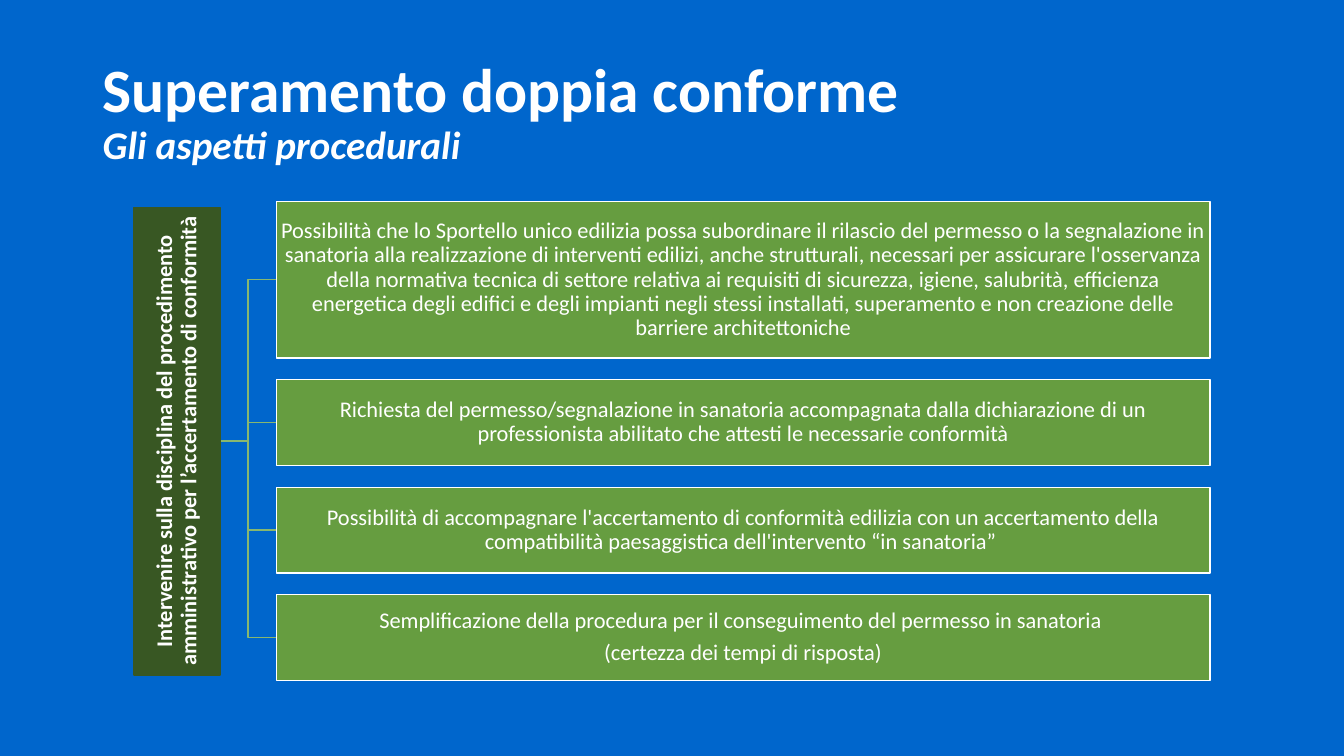
"""Build the slide on the procedural side of the double conformity reform."""
from dataclasses import dataclass

from pptx import Presentation
from pptx.dml.color import RGBColor
from pptx.enum.shapes import MSO_SHAPE as Shape
from pptx.enum.text import MSO_ANCHOR as Anchor, PP_ALIGN as Align
from pptx.util import Emu, Inches, Pt

BLUE = RGBColor(0x00, 0x66, 0xCC)
WHITE = RGBColor(0xFF, 0xFF, 0xFF)
GREEN = RGBColor(0x66, 0x9D, 0x40)
DARK = RGBColor(0x38, 0x57, 0x23)
PALE = RGBColor(0x88, 0xB7, 0x6F)

WIDE, HIGH = Inches(13.33), Inches(7.5)
LEFT, SPAN = 20.56, 69.47
TOP, GAP = 26.67, 2.88
ROOT_X, ROOT_Y = 13.17, 58.35
ROOT_LONG, ROOT_THICK = 61.87, 6.4
EDGE = ROOT_X + ROOT_THICK / 2
SPINE = (EDGE + LEFT) / 2


@dataclass
class Step:
    lines: list[str]
    tall: float = 11.35


ROOT = ["Intervenire sulla disciplina del procedimento amministrativo per l’accertamento di conformità"]
STEPS = [
    Step(["Possibilità che lo Sportello unico edilizia possa subordinare il rilascio del permesso "
          "o la segnalazione in sanatoria alla realizzazione di interventi edilizi, anche "
          "strutturali, necessari per assicurare l'osservanza della normativa tecnica di settore "
          "relativa ai requisiti di sicurezza, igiene, salubrità, efficienza energetica degli "
          "edifici e degli impianti negli stessi installati, superamento e non creazione delle "
          "barriere architettoniche"], 20.67),
    Step(["Richiesta del permesso/segnalazione in sanatoria accompagnata dalla dichiarazione di un "
          "professionista abilitato che attesti le necessarie conformità"]),
    Step(["Possibilità di accompagnare l'accertamento di conformità edilizia con un accertamento "
          "della compatibilità paesaggistica dell'intervento “in sanatoria” "]),
    Step(["Semplificazione della procedura per il conseguimento del permesso in sanatoria ",
          "(certezza dei tempi di risposta)"]),
]


def across(share: float) -> Emu:
    """Turn a percentage of the slide's width into a length."""
    return Emu(round(WIDE * share / 100))


def down(share: float) -> Emu:
    """Turn a percentage of the slide's height into a length."""
    return Emu(round(HIGH * share / 100))


def write(para, text: str, size: float = 16, bold: bool = False, slant: bool = False) -> None:
    """Add a formatted run to a paragraph."""
    para.line_spacing = 0.9
    run = para.add_run()
    run.text = text
    font = run.font
    font.name, font.size, font.color.rgb = "Calibri", Pt(size), WHITE
    font.bold, font.italic = bold, slant


def block(slide, box: tuple, lines: list[str], fill: RGBColor, line: RGBColor, bold: bool = False):
    """Draw a filled rectangle with centred paragraphs."""
    shape = slide.shapes.add_shape(Shape.RECTANGLE, *box)
    shape.shadow.inherit = False
    shape.fill.solid()
    shape.fill.fore_color.rgb = fill
    shape.line.color.rgb, shape.line.width = line, Pt(1)
    frame = shape.text_frame
    frame.word_wrap, frame.vertical_anchor = True, Anchor.MIDDLE
    frame.margin_left = frame.margin_right = Inches(0.01)
    frame.margin_top = frame.margin_bottom = Inches(0.01)
    for spot, text in enumerate(lines):
        para = frame.add_paragraph() if spot else frame.paragraphs[0]
        para.alignment, para.space_after = Align.CENTER, Pt(5.6)
        write(para, text, bold=bold)
    return shape


def branch(slide, mid: float) -> None:
    """Draw the bent line from the root to a step centred at the given share."""
    bends = [(SPINE, ROOT_Y), (SPINE, mid), (LEFT, mid)]
    pen = slide.shapes.build_freeform(across(EDGE), down(ROOT_Y))
    pen.add_line_segments([(across(x), down(y)) for x, y in bends], close=False)
    line = pen.convert_to_shape()
    line.shadow.inherit = False
    line.fill.background()
    line.line.color.rgb, line.line.width = PALE, Pt(1)


def head(slide) -> None:
    """Write the title and its subtitle."""
    box = slide.shapes.add_textbox(across(6.9), down(5.33), across(86.27), down(19.33))
    frame = box.text_frame
    frame.word_wrap, frame.vertical_anchor = True, Anchor.MIDDLE
    para = frame.paragraphs[0]
    write(para, "Superamento doppia conforme", size=44, bold=True)
    para.add_line_break()
    write(para, "Gli aspetti procedurali", size=28, bold=True, slant=True)


def tree(slide) -> None:
    """Draw the upright root, the steps and the lines between them."""
    long, thick = down(ROOT_LONG), across(ROOT_THICK)
    tops = [TOP + sum(step.tall + GAP for step in STEPS[:spot]) for spot in range(len(STEPS))]
    for top, step in reversed(list(zip(tops, STEPS))):
        branch(slide, top + step.tall / 2)
    root = block(slide, (across(ROOT_X) - long // 2, down(ROOT_Y) - thick // 2, long, thick),
                 ROOT, DARK, DARK, bold=True)
    root.rotation = 270
    for top, step in zip(tops, STEPS):
        block(slide, (across(LEFT), down(top), across(SPAN), down(step.tall)),
              step.lines, GREEN, WHITE)


def main() -> None:
    """Build and save the deck."""
    deck = Presentation()
    deck.slide_width, deck.slide_height = WIDE, HIGH
    slide = deck.slides.add_slide(deck.slide_layouts[6])
    slide.background.fill.solid()
    slide.background.fill.fore_color.rgb = BLUE
    head(slide)
    tree(slide)
    deck.save("out.pptx")


if __name__ == "__main__":
    main()
